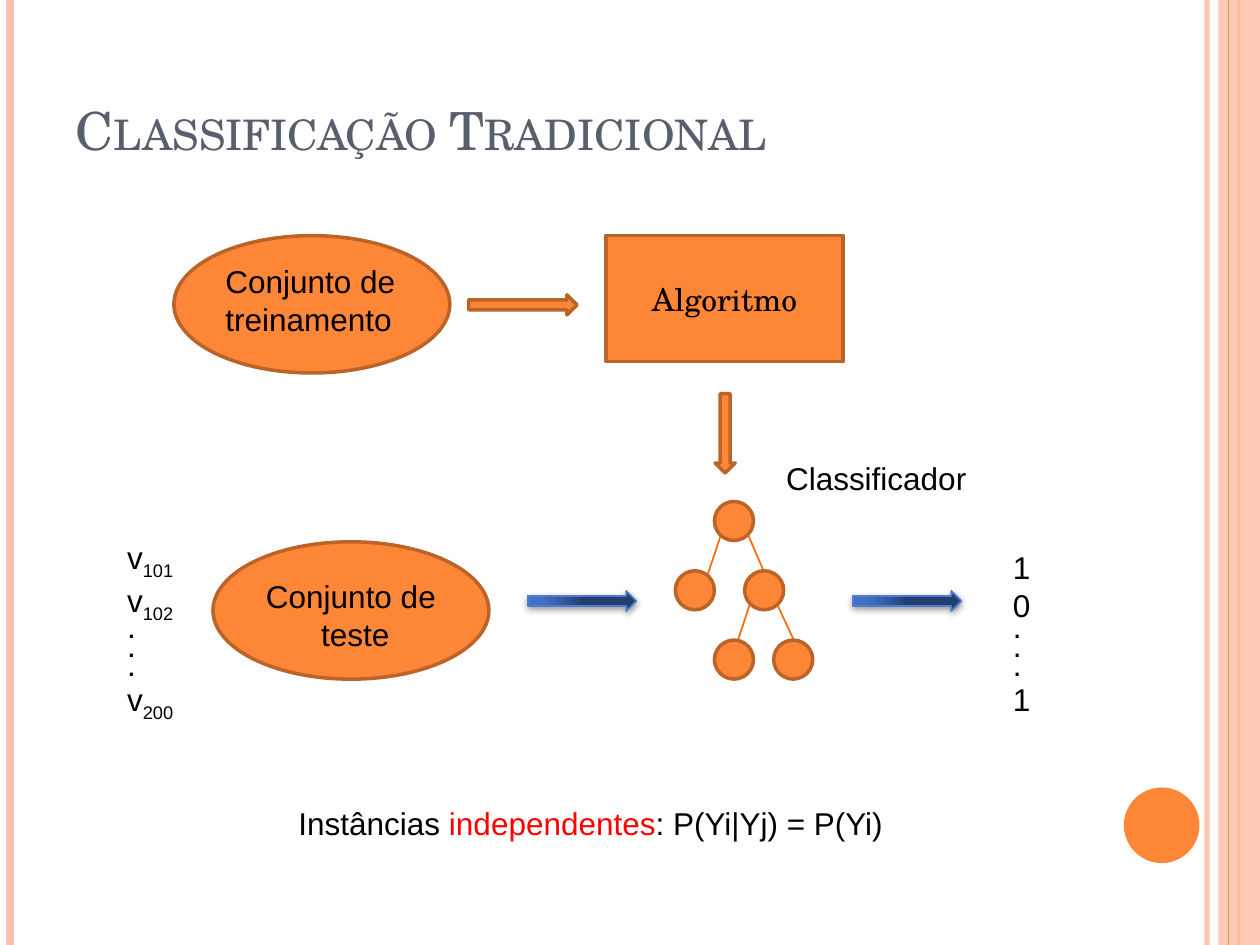
from dataclasses import dataclass
from typing import Optional

from lxml import etree
from pptx import Presentation
from pptx.dml.color import RGBColor
from pptx.enum.shapes import MSO_CONNECTOR, MSO_SHAPE
from pptx.enum.text import MSO_ANCHOR, MSO_AUTO_SIZE, PP_ALIGN
from pptx.oxml import parse_xml
from pptx.oxml.ns import nsdecls, qn
from pptx.util import Inches, Pt

STRAIGHT = MSO_CONNECTOR.STRAIGHT
OVAL, RECTANGLE, ARROW = MSO_SHAPE.OVAL, MSO_SHAPE.RECTANGLE, MSO_SHAPE.RIGHT_ARROW
LEFT, CENTER = PP_ALIGN.LEFT, PP_ALIGN.CENTER
TOP, MIDDLE, BOTTOM = MSO_ANCHOR.TOP, MSO_ANCHOR.MIDDLE, MSO_ANCHOR.BOTTOM

COLORS = {
    "orange": "FE8637", "outline": "BC6329", "edge": "FF6B0A", "stripe": "FEC3AE",
    "title": "575F6D", "black": "000000", "red": "FF0000", "blue_line": "4F7CCF",
}
BLUE_STOPS = ((0, "4574CC"), (30, "4370C5"), (75, "2F5397"), (100, "233E70"))
SANS, SERIF = "Arial", "TeX Gyre Schola"
NODE = 0.31


@dataclass
class Span:
    text: str
    color: str = "black"
    subscript: bool = False


@dataclass
class Line:
    spans: list[Span]
    spacing: Optional[float] = None


@dataclass
class Label:
    at: tuple[float, float, float, float]
    lines: list[Line]
    align: PP_ALIGN = LEFT
    wrap: bool = False


@dataclass
class Stroke:
    start: tuple[float, float]
    end: tuple[float, float]
    color: str
    width: float
    opacity: int = 100


def rgb(name: str) -> RGBColor:
    return RGBColor.from_string(COLORS[name])


def set_opacity(fill_parent, percent: int) -> None:
    """Make the first solid colour below an element partly transparent."""
    color = next(fill_parent.iter(qn("a:srgbClr")))
    etree.SubElement(color, qn("a:alpha")).set("val", str(percent * 1000))


def draw_stroke(page, stroke: Stroke) -> None:
    points = [Inches(value) for value in (*stroke.start, *stroke.end)]
    connector = page.shapes.add_connector(STRAIGHT, *points)
    connector.line.color.rgb = rgb(stroke.color)
    connector.line.width = Pt(stroke.width)
    properties = connector._element.spPr
    if stroke.opacity < 100:
        set_opacity(properties, stroke.opacity)
    etree.SubElement(properties, qn("a:effectLst"))


def draw_shape(page, kind, at, fill="orange", line: Optional[str] = "outline", width=2.0):
    shape = page.shapes.add_shape(kind, *map(Inches, at))
    shape.shadow.inherit = False
    shape.fill.solid()
    shape.fill.fore_color.rgb = rgb(fill)
    if line:
        shape.line.color.rgb = rgb(line)
        shape.line.width = Pt(width)
    else:
        shape.line.fill.background()
    return shape


def draw_blue_arrow(page, left: float) -> None:
    """Draw an arrow with a radial blue gradient and a soft shadow below."""
    arrow = draw_shape(page, ARROW, (left, 4.69, 0.86, 0.16), line="blue_line", width=1)
    stops = "".join(f'<a:gs pos="{position * 1000}"><a:srgbClr val="{color}"/></a:gs>'
                    for position, color in BLUE_STOPS)
    gradient = parse_xml(
        f'<a:gradFill {nsdecls("a")} rotWithShape="1"><a:gsLst>{stops}</a:gsLst>'
        '<a:path path="circle"><a:fillToRect l="5000" t="100000" r="120000" b="10000"/>'
        '</a:path></a:gradFill>')
    properties = arrow._element.spPr
    properties.replace(properties.find(qn("a:solidFill")), gradient)
    properties.find(qn("a:effectLst")).append(parse_xml(
        f'<a:outerShdw {nsdecls("a")} blurRad="{Pt(4)}" dist="{Pt(1.6)}" dir="5400000" '
        'rotWithShape="0"><a:srgbClr val="000000"><a:alpha val="42000"/></a:srgbClr>'
        '</a:outerShdw>'))


def write_lines(frame, lines: list[Line], align=LEFT, font=SANS, size=18) -> None:
    for index, line in enumerate(lines):
        para = frame.add_paragraph() if index else frame.paragraphs[0]
        para.alignment = align
        para.font.name, para.font.size = font, Pt(size)
        if line.spacing:
            para.line_spacing = line.spacing
        for part in line.spans:
            span = para.add_run()
            span.text = part.text
            span.font.color.rgb = rgb(part.color)
            if part.subscript:
                span._r.get_or_add_rPr().set("baseline", "-25000")


def draw_label(page, label: Label) -> None:
    frame = page.shapes.add_textbox(*map(Inches, label.at)).text_frame
    frame.word_wrap = label.wrap
    frame.auto_size = MSO_AUTO_SIZE.SHAPE_TO_FIT_TEXT
    write_lines(frame, label.lines, label.align)


def plain(text: str) -> Line:
    return Line([Span(text)])


def indexed(number: str) -> Line:
    return Line([Span("v"), Span(number, subscript=True)])


def vertical(x: float, color: str, width: float, opacity: int = 100) -> Stroke:
    return Stroke((x, 0), (x, 7.5), color, width, opacity)


DOTS = [Line([Span(".")], spacing=0.5)] * 3
LABELS = [
    Label((1.69, 2.03, 2.58, 0.71), [plain("Conjunto de treinamento")], wrap=True),
    Label((1.53, 4.53, 2.58, 0.71), [plain("Conjunto de "), plain("teste")], CENTER, True),
    Label((6.14, 3.59, 1.65, 0.4), [plain("Classificador")]),
    Label((0.91, 4.22, 0.61, 1.77), [indexed("101"), indexed("102"), *DOTS, indexed("200")]),
    Label((7.94, 4.3, 0.34, 1.77), [plain("1"), plain("0"), *DOTS, plain("1")]),
    Label((2.27, 6.33, 4.88, 0.4), [Line([
        Span("Instâncias "), Span("independentes", "red"), Span(": P(Yi|Yj) = P(Yi)")])]),
]
TREE_NODES = [(5.67, 3.98), (5.36, 4.53), (5.91, 4.53), (5.67, 5.08), (6.14, 5.08)]
TREE_EDGES = [((5.72, 4.25), (5.6, 4.61)), ((5.94, 4.25), (6.06, 4.53)),
              ((5.95, 4.8), (5.83, 5.16)), ((6.17, 4.8), (6.3, 5.08))]


def draw_border(page) -> None:
    for stroke in (vertical(9.58, "stripe", 3, 93), vertical(0.08, "stripe", 4.5),
                   vertical(9.83, "orange", 1.5)):
        draw_stroke(page, stroke)
    band = draw_shape(page, RECTANGLE, (9.67, 0, 0.33, 7.5), "stripe", None)
    set_opacity(band._element.spPr, 87)
    draw_stroke(page, vertical(9.75, "orange", 0.75))
    draw_shape(page, OVAL, (8.92, 6.25, 0.6, 0.6), line=None)


def draw_title(page) -> None:
    frame = page.shapes.add_textbox(*map(Inches, (0.5, 0.08, 8.17, 1.25))).text_frame
    frame.word_wrap = True
    frame.vertical_anchor = BOTTOM
    write_lines(frame, [Line([Span("Classificação Tradicional", "title")])], LEFT, SERIF, 30)
    frame.paragraphs[0].runs[0]._r.get_or_add_rPr().set("cap", "small")


def draw_diagram(page) -> None:
    for left, top in ((1.38, 1.87), (1.69, 4.3)):
        draw_shape(page, OVAL, (left, top, 2.19, 1.09))
    algorithm = draw_shape(page, RECTANGLE, (4.81, 1.87, 1.88, 1)).text_frame
    algorithm.vertical_anchor = MIDDLE
    write_lines(algorithm, [plain("Algoritmo")], CENTER, SERIF)
    draw_shape(page, ARROW, (3.72, 2.34, 0.86, 0.16))
    draw_shape(page, ARROW, (5.44, 3.36, 0.63, 0.16)).rotation = 90
    for start, end in TREE_EDGES:
        draw_stroke(page, Stroke(start, end, "edge", 1))
    for left, top in TREE_NODES:
        draw_shape(page, OVAL, (left, top, NODE, NODE))
    for left in (4.19, 6.77):
        draw_blue_arrow(page, left)
    for label in LABELS:
        draw_label(page, label)


def main() -> None:
    deck = Presentation()
    deck.slide_width, deck.slide_height = Inches(10), Inches(7.5)
    page = deck.slides.add_slide(deck.slide_layouts[6])
    draw_border(page)
    draw_title(page)
    draw_diagram(page)
    deck.save("out.pptx")


if __name__ == "__main__":
    main()
